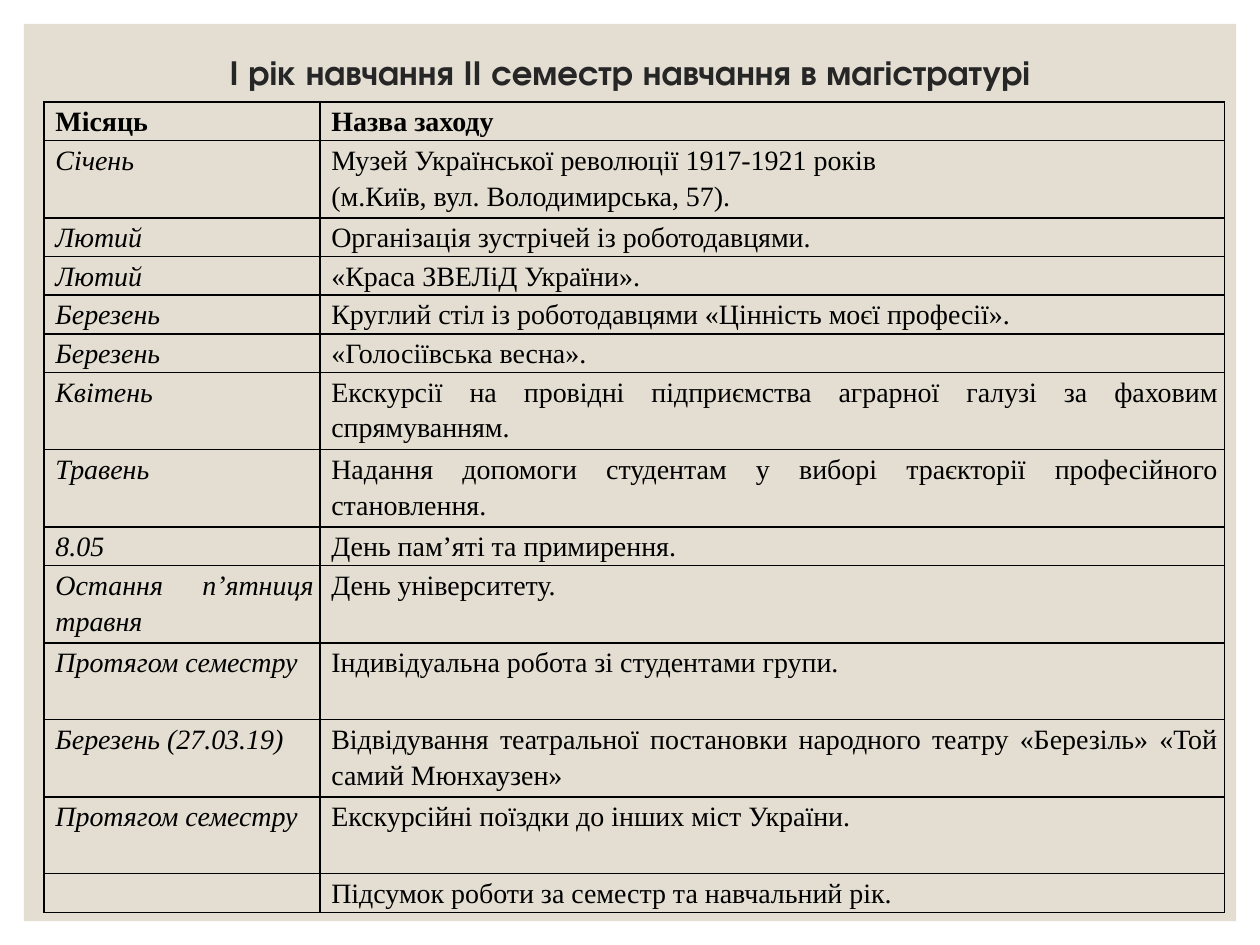
from dataclasses import dataclass

from lxml.etree import SubElement
from pptx import Presentation
from pptx.dml.color import RGBColor
from pptx.enum.shapes import MSO_SHAPE as Shape
from pptx.enum.text import MSO_ANCHOR as Anchor, PP_ALIGN as Align
from pptx.oxml.ns import qn
from pptx.util import Inches, Pt


@dataclass(frozen=True)
class Theme:
    panel: str = "E3DED1"
    title: str = "262626"
    ink: str = "000000"
    title_font: str = "TeX Gyre Adventor"
    table_font: str = "Times New Roman"
    title_size: int = 20
    table_size: int = 16
    border_width: int = 1


THEME = Theme()
TITLE = "І рік навчання ІІ семестр навчання в магістратурі "
HEADER = ("Місяць", "Назва заходу")

# Month, event, height in row units
EVENTS = [
    ("Січень", "Музей Української революції 1917-1921 років\n(м.Київ, вул. Володимирська, 57).", 2),
    ("Лютий", "Організація зустрічей із роботодавцями.", 1),
    ("Лютий", "«Краса ЗВЕЛіД України».", 1),
    ("Березень", "Круглий стіл із роботодавцями «Цінність моєї професії».", 1),
    ("Березень", "«Голосіївська весна».", 1),
    ("Квітень", "Екскурсії на провідні підприємства аграрної галузі за фаховим спрямуванням.", 2),
    ("Травень", "Надання допомоги студентам у виборі траєкторії професійного становлення. ", 2),
    ("8.05", "День пам’яті та примирення. ", 1),
    ("Остання п’ятниця травня", "День університету.", 2),
    ("Протягом семестру", "Індивідуальна робота зі студентами групи.", 2),
    ("Березень (27.03.19)", "Відвідування театральної постановки народного театру «Березіль» «Той самий Мюнхаузен»", 2),
    ("Протягом семестру", "Екскурсійні поїздки до інших міст України.", 2),
    ("", "Підсумок роботи за семестр та навчальний рік.", 1),
]


def style_font(font, name, size, color, bold=False, italic=False):
    font.name = name
    font.size = Pt(size)
    font.color.rgb = RGBColor.from_string(color)
    font.bold = bold
    font.italic = italic


def add_panel(slide):
    shape = slide.shapes.add_shape(
        Shape.RECTANGLE, Inches(0.19), Inches(0.19), Inches(9.62), Inches(7.12))
    shape.shadow.inherit = False
    shape.fill.solid()
    shape.fill.fore_color.rgb = RGBColor.from_string(THEME.panel)
    shape.line.fill.background()


def add_title(slide):
    shape = slide.shapes.add_textbox(Inches(0.84), Inches(0.36), Inches(8.4), Inches(0.45))
    text_frame = shape.text_frame
    text_frame.word_wrap = True
    text_frame.vertical_anchor = Anchor.MIDDLE
    text_frame.text = TITLE
    paragraph = text_frame.paragraphs[0]
    paragraph.alignment = Align.CENTER
    paragraph.line_spacing = 0.9
    style_font(paragraph.runs[0].font, THEME.title_font, THEME.title_size, THEME.title, bold=True)


def set_borders(cell):
    properties = cell._tc.get_or_add_tcPr()
    for index, side in enumerate(("a:lnL", "a:lnR", "a:lnT", "a:lnB")):
        line = properties.makeelement(qn(side), {"w": str(Pt(THEME.border_width))})
        fill = SubElement(line, qn("a:solidFill"))
        SubElement(fill, qn("a:srgbClr"), val=THEME.ink)
        properties.insert(index, line)  # borders come before the fill


def fill_cell(cell, text, bold=False, italic=False):
    cell.margin_left = cell.margin_right = Inches(0.05)
    cell.margin_top = cell.margin_bottom = 0
    cell.fill.background()
    set_borders(cell)
    cell.text_frame.text = text
    for paragraph in cell.text_frame.paragraphs:
        paragraph.alignment = Align.JUSTIFY
        paragraph.line_spacing = 1.15
        paragraph._p.get_or_add_pPr().set("marL", str(Inches(0.04)))
        for run in paragraph.runs:
            style_font(run.font, THEME.table_font, THEME.table_size, THEME.ink, bold, italic)
        if not paragraph.runs:  # keeps an empty row from growing
            SubElement(paragraph._p, qn("a:endParaRPr"), sz=str(THEME.table_size * 100))


def add_schedule(slide):
    units = [1] + [height for _, _, height in EVENTS]
    height = Inches(6.4)
    table = slide.shapes.add_table(
        len(units), 2, Inches(0.35), Inches(0.81), Inches(9.37), height).table
    table.horz_banding = False
    for column, width in zip(table.columns, (2.19, 7.18)):
        column.width = Inches(width)
    for row, unit in zip(table.rows, units):
        row.height = height * unit // sum(units)

    for column, text in enumerate(HEADER):
        fill_cell(table.cell(0, column), text, bold=True)
    for row, (month, event, _) in enumerate(EVENTS, start=1):
        fill_cell(table.cell(row, 0), month, italic=True)
        fill_cell(table.cell(row, 1), event)


def main():
    presentation = Presentation()
    presentation.slide_width = Inches(10)
    presentation.slide_height = Inches(7.5)
    slide = presentation.slides.add_slide(presentation.slide_layouts[6])
    add_panel(slide)
    add_title(slide)
    add_schedule(slide)
    presentation.save("out.pptx")


if __name__ == "__main__":
    main()
